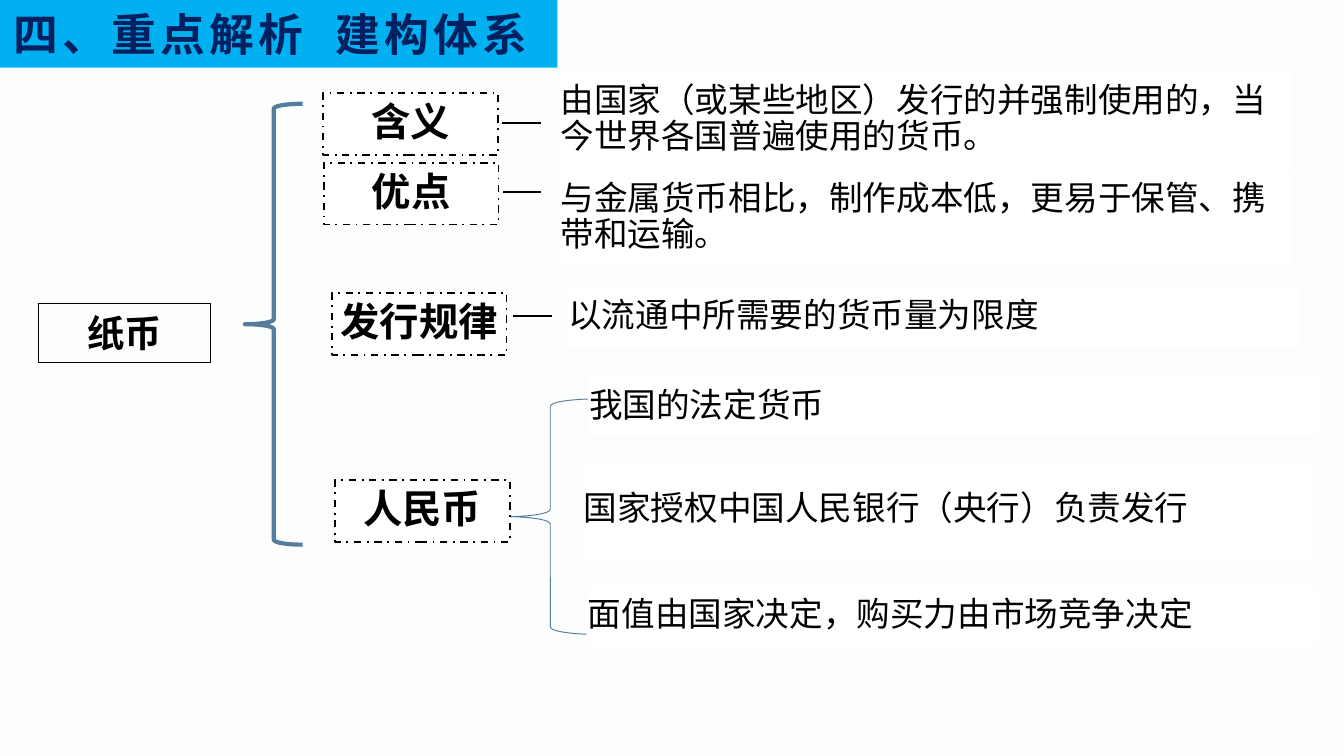
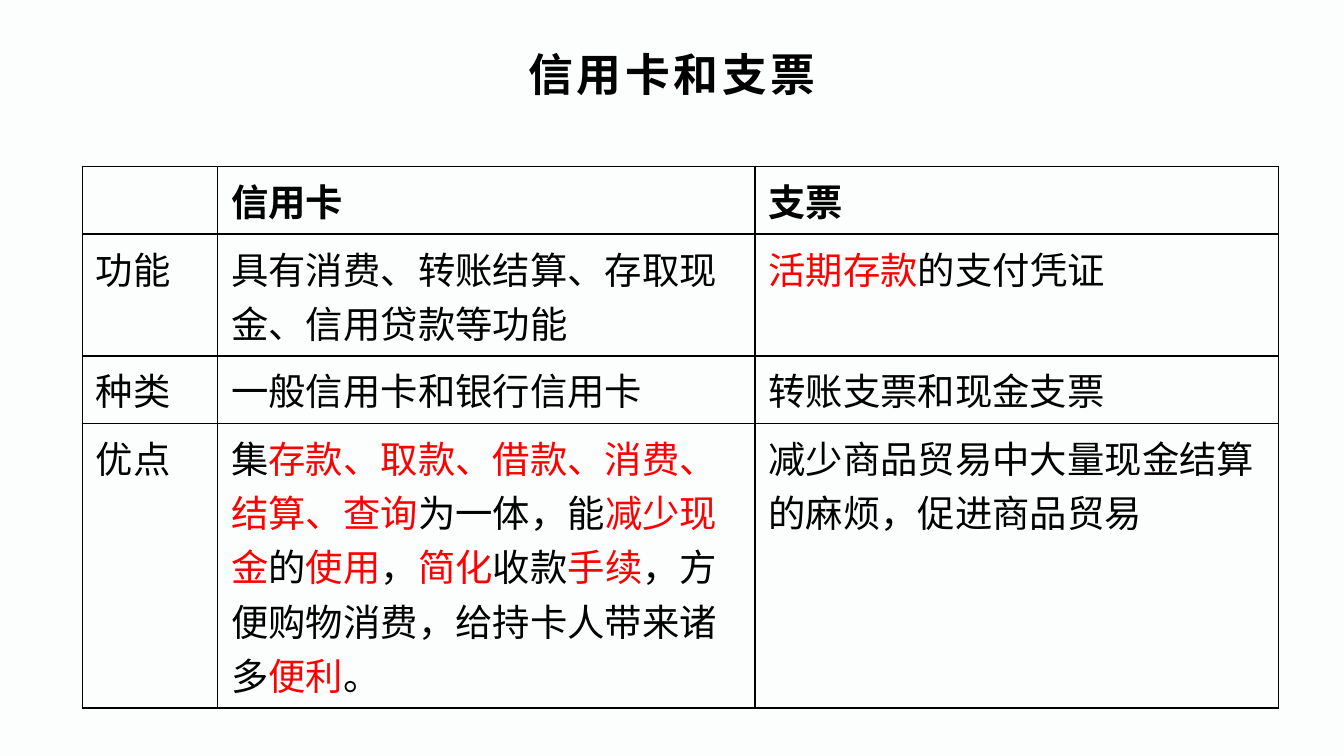
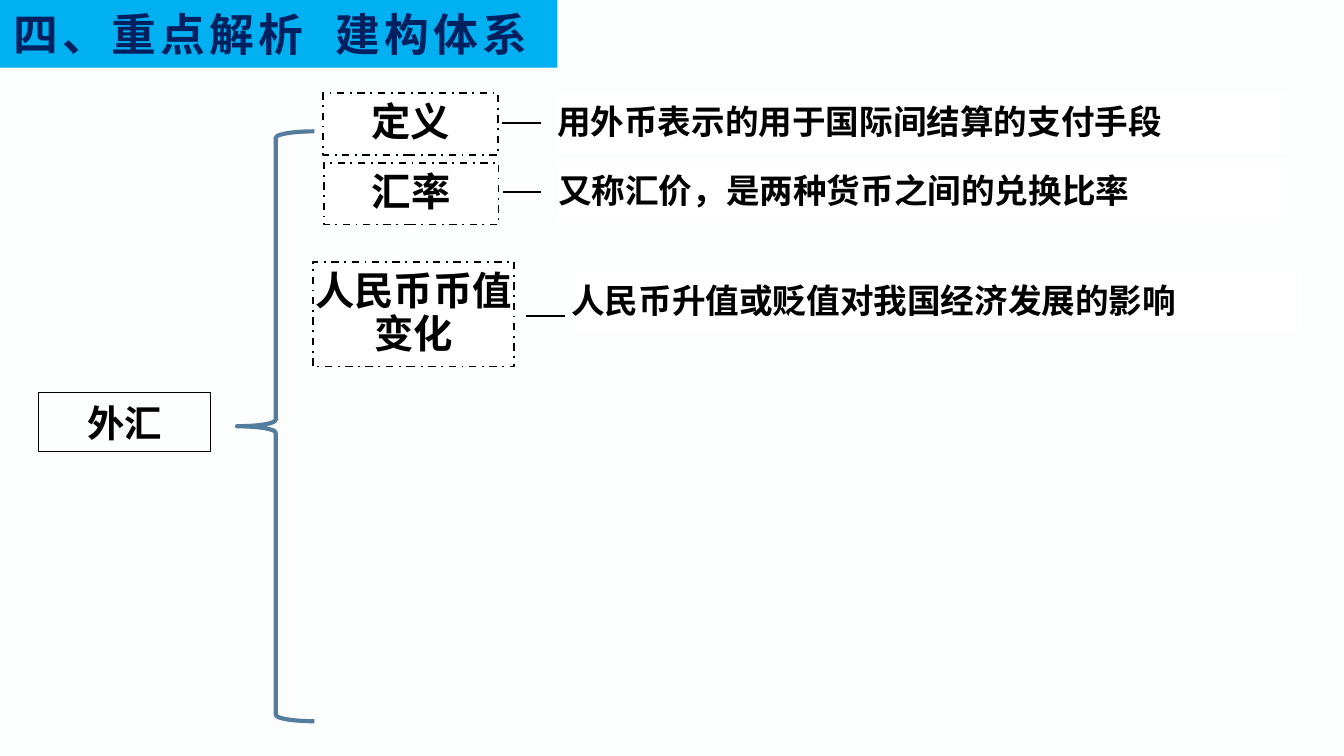
from lxml import etree
from pptx import Presentation
from pptx.dml.color import RGBColor
from pptx.enum.dml import MSO_LINE
from pptx.enum.shapes import MSO_CONNECTOR, MSO_SHAPE
from pptx.enum.text import MSO_ANCHOR, PP_ALIGN
from pptx.oxml.ns import qn
from pptx.util import Pt

RECT, BRACE = MSO_SHAPE.RECTANGLE, MSO_SHAPE.LEFT_BRACE
STRAIGHT = MSO_CONNECTOR.STRAIGHT
DASH = MSO_LINE.DASH_DOT
MIDDLE = MSO_ANCHOR.MIDDLE
LEFT, CENTER = PP_ALIGN.LEFT, PP_ALIGN.CENTER

BLACK = RGBColor(0x00, 0x00, 0x00)
WHITE = RGBColor(0xFF, 0xFF, 0xFF)
PAPER = RGBColor(0xFC, 0xFD, 0xFD)
RED = RGBColor(0xFF, 0x00, 0x00)
SKY = RGBColor(0x00, 0xB0, 0xF0)
NAVY = RGBColor(0x00, 0x20, 0x60)
STEEL = RGBColor(0x54, 0x7D, 0x9D)

SANS, ARIAL = "Noto Sans CJK SC", "Arial"


def write(frame, text, size, face=SANS, bold=True, color=BLACK, align=LEFT, gap=0):
    """Fill the first paragraph; parts between bars are red, gap is letter spacing."""
    para = frame.paragraphs[0]
    para.alignment = align
    for i, part in enumerate(text.split("|")):
        if not part:
            continue
        run = para.add_run()
        run.text = part
        font = run.font
        font.size, font.bold = Pt(size), bold
        font.color.rgb = RED if i % 2 else color
        font.name = face
        props = run._r.get_or_add_rPr()
        etree.SubElement(props, qn("a:ea")).set("typeface", SANS)
        if gap:
            props.set("spc", str(round(gap * 100)))
    return para


def draw(slide, kind, x, y, w, h, fill=None, line=None, width=1):
    """Add a flat shape and return it."""
    shape = slide.shapes.add_shape(kind, Pt(x), Pt(y), Pt(w), Pt(h))
    shape.shadow.inherit = False
    if fill is None:
        shape.fill.background()
    else:
        shape.fill.solid()
        shape.fill.fore_color.rgb = fill
    if line is None:
        shape.line.fill.background()
    else:
        shape.line.color.rgb = line
        shape.line.width = Pt(width)
    frame = shape.text_frame
    frame.word_wrap = True
    frame.vertical_anchor = MIDDLE
    return shape


deck = Presentation()
deck.slide_width, deck.slide_height = Pt(720), Pt(405)
slides = []
for _ in range(3):
    slide = deck.slides.add_slide(deck.slide_layouts[6])
    slide.background.fill.solid()
    slide.background.fill.fore_color.rgb = PAPER
    slides.append(slide)

# Concept maps: labels and notes are (x, y, w, h, text)
LABEL, NOTE, ROW = 93.6, 391.9, 33.2
money = {
    "slide": slides[0],
    "root": ("纸币", 162.5),
    "braces": [(131.2, 55.6, 31, 236.2, 2.25), (271.4, 213.8, 46.8, 126, 0.5)],
    "labels": [
        (173.2, 49.8, LABEL, ROW, "含义"),
        (173.5, 87.1, LABEL, ROW, "优点"),
        (177.8, 157, LABEL, ROW, "发行规律"),
        (179.5, 257.2, LABEL, ROW, "人民币"),
    ],
    "links": [(269.1, 65.8), (269.4, 103), (275, 169.2)],
    "notes": [
        (314.9, 201.1, NOTE, ROW, "我国的法定货币"),
        (312, 247.4, NOTE, 51.6, "国家授权中国人民银行（央行）负责发行"),
        (314.2, 313.2, NOTE, ROW, "面值由国家决定，购买力由市场竞争决定"),
        (299.5, 37.7, NOTE, 52.6,
         "由国家（或某些地区）发行的并强制使用的，当今世界各国普遍使用的货币。"),
        (299.5, 90.3, NOTE, 52.6, "与金属货币相比，制作成本低，更易于保管、携带和运输。"),
        (303.8, 153.1, NOTE, ROW, "以流通中所需要的货币量为限度"),
    ],
    "style": (18, ARIAL, False),
}
forex = {
    "slide": slides[2],
    "root": ("外汇", 210.3),
    "braces": [(127, 70.4, 41.5, 316, 2.25)],
    "labels": [
        (173.2, 49.8, LABEL, ROW, "定义"),
        (173.5, 87.1, LABEL, ROW, "汇率"),
        (167.6, 140.2, 108, 56.2, "人民币币值变化"),
    ],
    "links": [(269.1, 65.8), (269.4, 103), (282, 169.2)],
    "notes": [
        (297.7, 49.4, NOTE, ROW, "用外币表示的用于国际间结算的支付手段"),
        (298.3, 86.4, NOTE, ROW, "又称汇价，是两种货币之间的兑换比率"),
        (305.3, 145.4, NOTE, ROW, "人民币升值或贬值对我国经济发展的影响"),
    ],
    "style": (18, SANS, True),
}

for plan in (money, forex):
    slide = plan["slide"]
    name, top = plan["root"]
    root = draw(slide, RECT, 20.6, top, 92.2, 31.7, PAPER, BLACK, 0.75)
    write(root.text_frame, name, 20, align=CENTER)

    for x, y, w, h, width in plan["braces"]:
        draw(slide, BRACE, x, y, w, h, line=STEEL, width=width)

    label = (21.1, SANS, True, BLACK, CENTER)
    groups = [(plan["labels"], BLACK, label), (plan["notes"], None, plan["style"])]
    for items, edge, style in groups:
        for x, y, w, h, text in items:
            box = draw(slide, RECT, x, y, w, h, WHITE, edge)
            if edge is not None:
                box.line.dash_style = DASH
            frame = box.text_frame
            frame.margin_left = frame.margin_right = Pt(0.7)
            frame.margin_top = frame.margin_bottom = Pt(0.7)
            write(frame, text, *style).line_spacing = 0.9

    for x, y in plan["links"]:
        link = slide.shapes.add_connector(STRAIGHT, Pt(x), Pt(y), Pt(x + 20.5), Pt(y))
        link.line.color.rgb = BLACK
        link.line.width = Pt(1)
        etree.SubElement(link._element.spPr, qn("a:effectLst"))

    band = draw(slide, RECT, 0, 0, 298.6, 36.2, SKY)
    for text, gap in (("四、重点解析", 2.3), (" ", 9.5), ("建构体系", 2.3)):
        write(band.text_frame, text, 24, color=NAVY, gap=gap)

# Credit cards and cheques
slide = slides[1]
title = slide.shapes.add_textbox(Pt(39.6), Pt(26.3), Pt(640.8), Pt(25.9))
title.text_frame.word_wrap = True
title.text_frame.vertical_anchor = MIDDLE
write(title.text_frame, "信用卡和支票", 24, ARIAL, align=CENTER, gap=2)

ROWS = [
    (36.2, "", "信用卡", "支票"),
    (65.2, "功能", "具有消费、转账结算、存取现金、信用贷款等功能",
     "|活期存款|的支付凭证"),
    (36.2, "种类", "一般信用卡和银行信用卡", "转账支票和现金支票"),
    (152.4, "优点",
     "集|存款、取款、借款、消费、结算、查询|为一体，能|减少现金|的|使用|，|简化|收款|手续|"
     "，方便购物消费，给持卡人带来诸多|便利|。",
     "减少商品贸易中大量现金结算的麻烦，促进商品贸易"),
]
grid = slide.shapes.add_table(4, 3, Pt(44.2), Pt(89.2), Pt(640.8), Pt(290))
table = grid.table
for col, width in zip(table.columns, (72.4, 287.8, 280.6)):
    col.width = Pt(width)
for r, (height, *texts) in enumerate(ROWS):
    table.rows[r].height = Pt(height)
    for c, text in enumerate(texts):
        cell = table.cell(r, c)
        props = cell._tc.get_or_add_tcPr()
        for side in ("a:lnL", "a:lnR", "a:lnT", "a:lnB"):
            edge = etree.SubElement(props, qn(side), w=str(Pt(1)))
            paint = etree.SubElement(edge, qn("a:solidFill"))
            etree.SubElement(paint, qn("a:srgbClr"), val=str(BLACK))
        cell.fill.background()
        write(cell.text_frame, text, 20, ARIAL, bold=r == 0)

deck.save("out.pptx")
